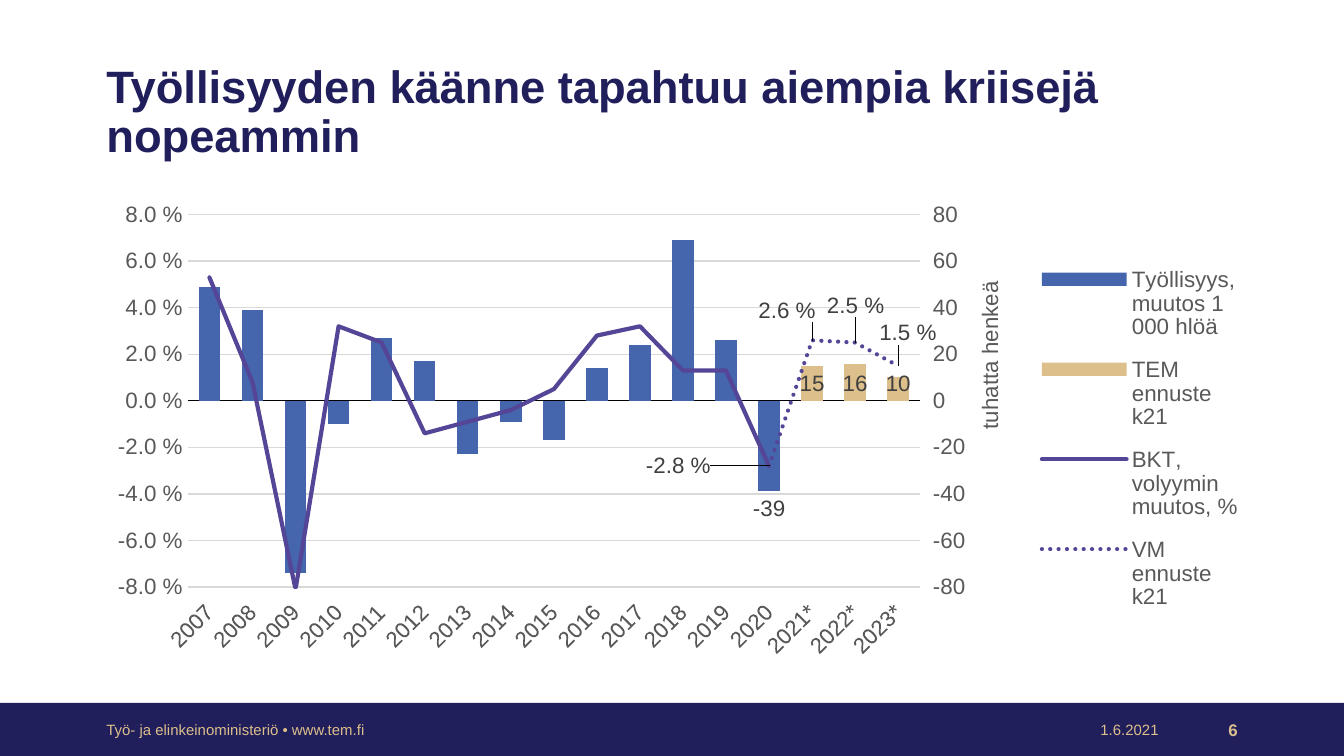
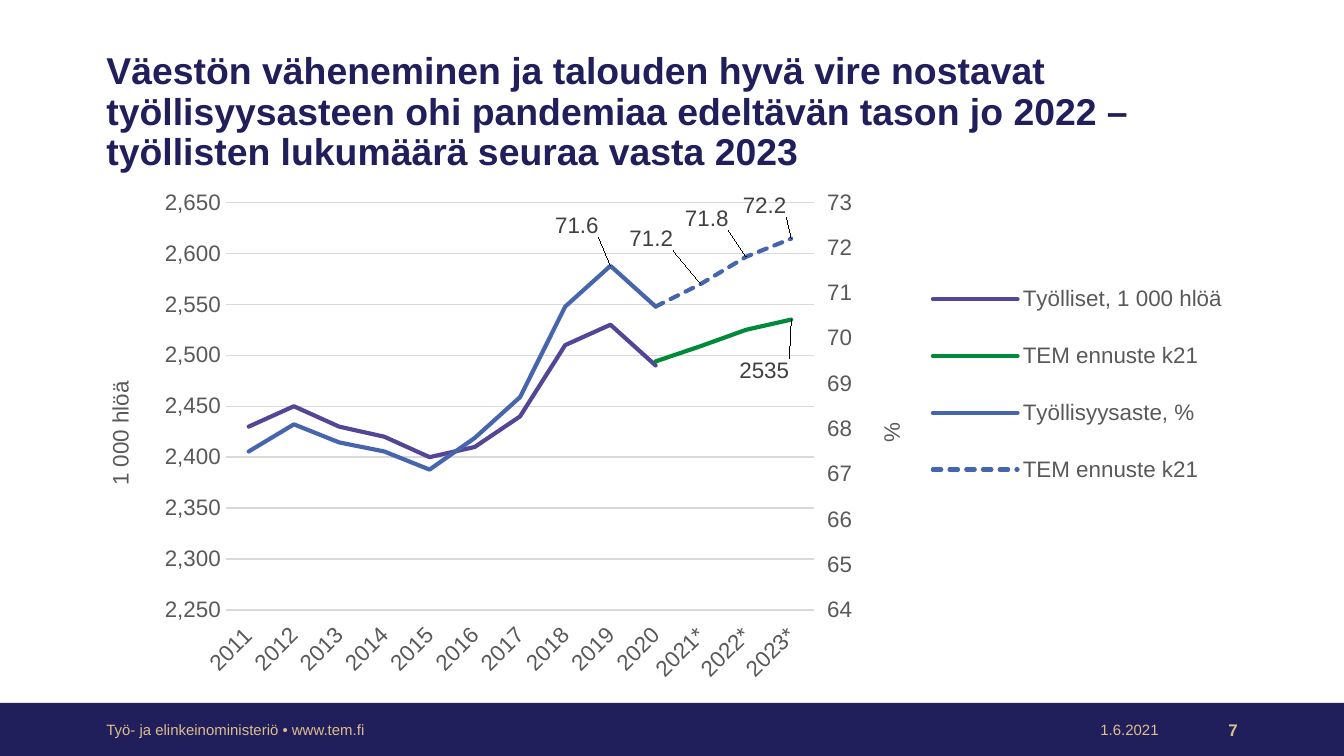
from dataclasses import dataclass

from pptx import Presentation
from pptx.chart.axis import ValueAxis
from pptx.chart.data import CategoryChartData
from pptx.dml.color import RGBColor
from pptx.enum.chart import XL_CHART_TYPE as Kind
from pptx.enum.chart import XL_LABEL_POSITION as Pos
from pptx.enum.chart import XL_LEGEND_POSITION as Side
from pptx.enum.chart import XL_MARKER_STYLE as Mark
from pptx.enum.chart import XL_TICK_LABEL_POSITION as Ticks
from pptx.enum.chart import XL_TICK_MARK as Tick
from pptx.enum.dml import MSO_LINE as Dash
from pptx.enum.shapes import MSO_SHAPE as Form
from pptx.enum.text import MSO_ANCHOR as Anchor
from pptx.enum.text import MSO_AUTO_SIZE as Fit
from pptx.enum.text import PP_ALIGN as Align
from pptx.oxml import parse_xml
from pptx.oxml.ns import nsdecls, qn
from pptx.util import Emu, Pt

SCALE = 914400 / 134.4
FONT = "Arial"
NAVY, SAND, BLUE = "201E5B", "DDBF8C", "4565AD"
PLUM, GREEN = "554596", "008B3B"
GREY, DARK, PALE, BLACK = "595959", "404040", "D9D9D9", "000000"
PERCENT = r"0.0\ %"
C15 = "http://schemas.microsoft.com/office/drawing/2012/chart"


@dataclass
class Box:
    x: int
    y: int
    w: int
    h: int

    def emu(self) -> list[Emu]:
        return [px(n) for n in (self.x, self.y, self.w, self.h)]


@dataclass
class Label:
    """A point's value label, moved by px from its place right of the point."""
    point: int
    dx: int
    dy: int


@dataclass
class Series:
    name: str
    vals: list
    color: str
    fmt: str = "0"
    dash: Dash | None = None
    labels: tuple = ()
    leader: bool = False


@dataclass
class Axis:
    low: float
    high: float
    unit: float
    fmt: str
    right: bool = False
    title: str = ""
    spot: tuple = ()


@dataclass
class Graph:
    kind: Kind
    box: Box
    years: list
    plot: tuple
    legend: tuple
    first: Axis
    second: Axis
    series: list
    base: str


def px(n: float) -> Emu:
    return Emu(round(n * SCALE))


def rgb(color: str) -> RGBColor:
    return RGBColor.from_string(color)


def style(font, size: float, color: str, bold: bool = False) -> None:
    font.name, font.size, font.bold = FONT, Pt(size), bold
    font.color.rgb = rgb(color)


def write(shape, text: str, size: float, color: str, bold=False, align=Align.LEFT) -> None:
    frame = shape.text_frame
    frame.text = text
    frame.word_wrap, frame.auto_size = True, Fit.NONE
    frame.vertical_anchor = Anchor.MIDDLE
    frame.margin_top = frame.margin_bottom = 0
    para = frame.paragraphs[0]
    para.alignment = align
    style(para.runs[0].font, size, color, bold)


def tag(body: str):
    """Parse one chart element whose opening name is the first word."""
    name, rest = body.split(" ", 1)
    return parse_xml(f"<c:{name} {nsdecls('c')} {rest}")


def place(parent, at: int, spot: tuple, mode: str = "") -> None:
    """Give a chart part a manual layout as child number `at`."""
    for old in parent.findall(qn("c:layout")):
        parent.remove(old)
    inner = '<c:layoutTarget val="inner"/>' if mode == "inner" else ""
    edge = '<c:xMode val="edge"/><c:yMode val="edge"/>' if mode else ""
    nums = "".join(f'<c:{k} val="{v:.3f}"/>' for k, v in zip("xywh", spot))
    parent.insert(at, tag(f"layout ><c:manualLayout>{inner}{edge}{nums}</c:manualLayout></c:layout>"))


def split(area, count: int) -> ValueAxis:
    """Move the series from `count` on to a line group with its own axes."""
    lines = tag('lineChart ><c:grouping val="standard"/><c:varyColors val="0"/>'
                '<c:marker val="1"/><c:axId val="501"/><c:axId val="502"/></c:lineChart>')
    rows = area.xpath(".//c:ser")
    rows[0].getparent().addnext(lines)
    for at, row in enumerate(rows[count:], 2):
        for flag in row.findall(qn("c:invertIfNegative")):
            row.remove(flag)
        lines.insert(at, row)
    scale = '<c:scaling><c:orientation val="minMax"/></c:scaling>'
    value = tag(f'valAx ><c:axId val="502"/>{scale}<c:delete val="0"/><c:axPos val="l"/>'
                '<c:tickLblPos val="nextTo"/><c:crossAx val="501"/><c:crosses val="min"/></c:valAx>')
    cats = tag(f'catAx ><c:axId val="501"/>{scale}<c:delete val="1"/><c:axPos val="b"/>'
               '<c:crossAx val="502"/><c:crosses val="autoZero"/></c:catAx>')
    area.findall(qn("c:valAx"))[-1].addnext(value)
    value.addnext(cats)
    return ValueAxis(value)


def scale_axis(axis: ValueAxis, look: Axis, grid: bool) -> None:
    axis.minimum_scale, axis.maximum_scale = look.low, look.high
    axis.major_unit = look.unit
    axis.has_major_gridlines = grid
    if grid:
        line = axis.major_gridlines.format.line
        line.color.rgb, line.width = rgb(PALE), Pt(0.75)
    axis.major_tick_mark = Tick.OUTSIDE if look.right else Tick.NONE
    axis.minor_tick_mark = Tick.NONE
    axis.format.line.fill.background()
    marks = axis.tick_labels
    marks.number_format, marks.number_format_is_linked = look.fmt, False
    style(marks.font, 12, GREY)
    node = axis._element
    node.find(qn("c:axPos")).set("val", "r" if look.right else "l")
    cross = node.find(qn("c:crosses"))
    cross.set("val", "max" if look.right else "min")
    for old in node.findall(qn("c:crossBetween")):
        node.remove(old)
    cross.addnext(tag('crossBetween val="between"/>'))
    if look.title:
        frame = axis.axis_title.text_frame
        frame.text = look.title
        style(frame.paragraphs[0].runs[0].font, 12, GREY)
        title = axis.axis_title._element
        turn = title.xpath("c:tx/c:rich/a:bodyPr")[0]
        turn.set("rot", "-5400000")
        turn.set("vert", "horz")
        place(title, 1, look.spot, "edge")


def mark_points(line, item: Series, box: Box) -> None:
    every = line.data_labels
    every.show_value = False
    for label in item.labels:
        tip = line.points[label.point].data_label
        style(tip.font, 12, DARK)
        tip.position = Pos.RIGHT if label.dx else Pos.OUTSIDE_END
        node = line._element.xpath(f'c:dLbls/c:dLbl[c:idx/@val="{label.point}"]')[0]
        node.insert(1, tag(f'numFmt formatCode="{item.fmt}" sourceLinked="0"/>'))
        if label.dx:
            place(node, 1, (label.dx / box.w, label.dy / box.h))
    group = every._element
    for old in group.findall(qn("c:showLeaderLines")):
        group.remove(old)
    group.append(tag('extLst ><c:ext uri="{CE6537A1-D6FC-4f65-9D91-7224C49458BB}">'
                     f'<c15:showLeaderLines xmlns:c15="{C15}" val="{int(item.leader)}"/>'
                     '</c:ext></c:extLst>'))


def paint(line, item: Series, bar: bool) -> None:
    if bar:
        line.invert_if_negative = False
        line.format.fill.solid()
        line.format.fill.fore_color.rgb = rgb(item.color)
        return
    line.smooth = False
    line.marker.style = Mark.NONE
    pen = line.format.line
    pen.color.rgb, pen.width = rgb(item.color), Pt(2.25)
    if item.dash:
        pen.dash_style = item.dash
    line._element.xpath("c:spPr/a:ln")[0].set("cap", "rnd")


def draw_graph(slide, graph: Graph) -> None:
    data = CategoryChartData()
    data.categories = graph.years
    for item in graph.series:
        data.add_series(item.name, item.vals, item.fmt)
    chart = slide.shapes.add_chart(graph.kind, *graph.box.emu(), data).chart
    chart.has_title = False
    style(chart.font, 12, BLACK)
    area = chart._chartSpace.xpath("c:chart/c:plotArea")[0]
    first = chart.value_axis
    second = split(area, 2)
    place(area, 0, graph.plot, "inner")
    scale_axis(first, graph.first, True)
    scale_axis(second, graph.second, False)

    cats = chart.category_axis
    cats.major_tick_mark = cats.minor_tick_mark = Tick.NONE
    cats.tick_label_position = Ticks.LOW
    cats.format.line.color.rgb, cats.format.line.width = rgb(graph.base), Pt(0.75)
    style(cats.tick_labels.font, 12, GREY)
    cats._element.xpath("c:txPr/a:bodyPr")[0].set("rot", "-2700000")

    chart.has_legend = True
    chart.legend.position = Side.RIGHT
    chart.legend.include_in_layout = False
    style(chart.legend.font, 12, GREY)
    place(chart.legend._element, 1, graph.legend, "edge")

    bars = graph.kind == Kind.COLUMN_CLUSTERED
    lines = [line for plot in chart.plots for line in plot.series]
    for at, (line, item) in enumerate(zip(lines, graph.series)):
        paint(line, item, bars and at < 2)
        if item.labels:
            mark_points(line, item, graph.box)
    for plot in chart.plots:
        plot.vary_by_categories = False
    if bars:
        plot = chart.plots[0]
        plot.gap_width = plot.overlap = 100
        tips = lines[1].data_labels
        tips.show_value, tips.position = True, Pos.INSIDE_BASE
        style(tips.font, 12, DARK)


def add_page(deck, title: str, size: float, number: int, graph: Graph) -> None:
    slide = deck.slides.add_slide(deck.slide_layouts[5])
    band = slide.shapes.add_shape(Form.RECTANGLE, *Box(0, 703, 1344, 53).emu())
    band.shadow.inherit = False
    band.fill.solid()
    band.fill.fore_color.rgb = rgb(NAVY)
    band.line.fill.background()
    head = slide.shapes.title
    head.left, head.top, head.width, head.height = Box(93, 58, 1059, 110).emu()
    write(head, title, size, NAVY, True)
    head.text_frame.paragraphs[0].line_spacing = 0.9
    draw_graph(slide, graph)
    for x, w, text, points, bold, align in (
        (93, 453, "Työ- ja elinkeinoministeriö • www.tem.fi", 8, False, Align.LEFT),
        (1068, 104, "1.6.2021", 8, False, Align.RIGHT),
        (1172, 79, str(number), 9, True, Align.RIGHT),
    ):
        note = slide.shapes.add_textbox(*Box(x, 718, w, 23).emu())
        write(note, text, points, SAND, bold, align)


def years(start: int) -> list[str]:
    return [f"{y}*" if y > 2020 else str(y) for y in range(start, 2024)]


JOBS = Graph(
    Kind.COLUMN_CLUSTERED, Box(93, 168, 1158, 490), years(2007),
    (0.082, 0.096, 0.632, 0.766), (0.814, 0.167, 0.18, 0.78),
    Axis(-80, 80, 20, "0", True, "tuhatta henkeä", (0.759, 0.227)),
    Axis(-0.08, 0.08, 0.02, PERCENT),
    [Series("Työllisyys, muutos 1 000 hlöä",
            [49, 39, -74, -10, 27, 17, -23, -9, -17, 14, 24, 69, 26, -39] + [None] * 3,
            BLUE, labels=(Label(13, 0, 0),)),
     Series("TEM ennuste k21", [None] * 14 + [15, 16, 10], SAND),
     Series("BKT, volyymin muutos, %",
            [0.053, 0.008, -0.081, 0.032, 0.025, -0.014, -0.009, -0.004, 0.005,
             0.028, 0.032, 0.013, 0.013, -0.028] + [None] * 3, PLUM, PERCENT),
     Series("VM ennuste k21", [None] * 13 + [-0.028, 0.026, 0.025, 0.015],
            PLUM, PERCENT, Dash.ROUND_DOT,
            (Label(13, -128, 0), Label(14, -59, -30), Label(15, -34, -37), Label(16, -24, -33)))],
    BLACK)

RATE = Graph(
    Kind.LINE, Box(92, 176, 1146, 520), years(2011),
    (0.117, 0.051, 0.513, 0.784), (0.72, 0.151, 0.28, 0.5),
    Axis(2250, 2650, 50, "#,##0", False, "1 000 hlöä", (0.009, 0.387)),
    Axis(64, 73, 1, "0", True, "%", (0.682, 0.466)),
    [Series("Työlliset, 1 000 hlöä",
            [2430, 2450, 2430, 2420, 2400, 2410, 2440, 2510, 2530, 2490] + [None] * 3, PLUM),
     Series("TEM ennuste k21", [None] * 9 + [2494, 2509, 2525, 2535], GREEN,
            labels=(Label(12, -57, 51),), leader=True),
     Series("Työllisyysaste, %",
            [67.5, 68.1, 67.7, 67.5, 67.1, 67.8, 68.7, 70.7, 71.6, 70.7] + [None] * 3,
            BLUE, "0.0", labels=(Label(8, -61, -40),), leader=True),
     Series("TEM ennuste k21", [None] * 9 + [70.7, 71.2, 71.8, 72.2], BLUE, "0.0",
            Dash.SQUARE_DOT, (Label(10, -77, -45), Label(11, -67, -38), Label(12, -54, -33)))],
    PALE)


def main() -> None:
    deck = Presentation()
    deck.slide_width, deck.slide_height = px(1344), px(756)
    add_page(deck, "Työllisyyden käänne tapahtuu aiempia kriisejä nopeammin", 24.3, 6, JOBS)
    add_page(deck, "Väestön väheneminen ja talouden hyvä vire nostavat työllisyysasteen ohi "
             "pandemiaa edeltävän tason jo 2022 – työllisten lukumäärä seuraa vasta 2023",
             20, 7, RATE)
    deck.save("out.pptx")


if __name__ == "__main__":
    main()
